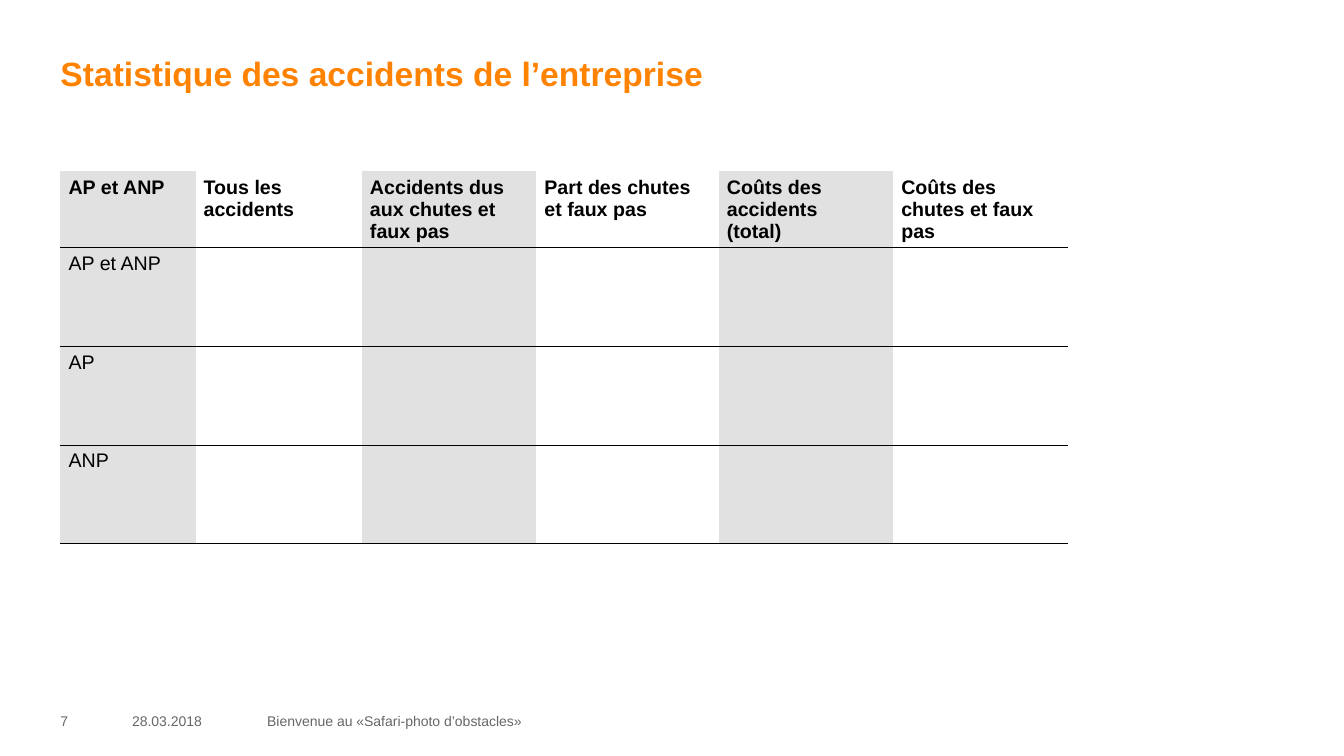
"""Build the company accident statistics slide."""
from dataclasses import dataclass

from lxml import etree
from pptx import Presentation
from pptx import util as u
from pptx.dml.color import RGBColor
from pptx.enum import text
from pptx.oxml import ns
from pptx.slide import Slide
from pptx.table import _Cell
from pptx.text.text import TextFrame

EMU_PER_PX = 9144
NO_STYLE = "{2D5ABB26-0587-4C30-8999-92F81FD0307C}"


@dataclass(frozen=True)
class Theme:
    font: str = "Arial"
    title_color: str = "FF8200"
    text_color: str = "000000"
    footer_color: str = "666666"
    stripe_color: str = "E1E1E1"
    title_size: int = 24
    table_size: int = 14
    footer_size: int = 10
    rule_width: float = 0.67


@dataclass(frozen=True)
class Box:
    left: int
    top: int
    width: int
    height: int


@dataclass(frozen=True)
class FooterItem:
    content: str
    left: int
    width: int


@dataclass(frozen=True)
class Column:
    heading: str
    width: int


THEME = Theme()
TITLE = "Statistique des accidents de l’entreprise"
TITLE_BOX = Box(60, 52, 1213, 94)
FOOTER_TOP, FOOTER_HEIGHT = 705, 20
FOOTER = [
    FooterItem("7", 60, 55),
    FooterItem("28.03.2018", 131, 118),
    FooterItem("Bienvenue au «Safari-photo d’obstacles»", 265, 858),
]
COLUMNS = [
    Column("AP et ANP", 134),
    Column("Tous les accidents", 165),
    Column("Accidents dus aux chutes et faux pas", 173),
    Column("Part des chutes et faux pas", 181),
    Column("Coûts des accidents \v(total)", 173),
    Column("Coûts des chutes et faux pas", 173),
]
ROW_LABELS = ["AP et ANP", "AP", "ANP"]
TABLE_LEFT, TABLE_TOP = 60, 170
HEADER_HEIGHT, ROW_HEIGHT = 75, 98


def px(length: int) -> u.Emu:
    """Convert px to EMU."""
    return u.Emu(length * EMU_PER_PX)


def write(frame: TextFrame, content: str, size: int, color: str, bold: bool = False) -> None:
    """Fill a text frame and format its runs."""
    frame.text = content
    for paragraph in frame.paragraphs:
        paragraph.alignment = text.PP_ALIGN.LEFT
        for run in paragraph.runs:
            run.font.name = THEME.font
            run.font.size = u.Pt(size)
            run.font.bold = bold
            run.font.color.rgb = RGBColor.from_string(color)


def prepare(frame: TextFrame, anchor: text.MSO_ANCHOR) -> None:
    """Remove margins and fix wrapping and anchoring."""
    frame.margin_left = frame.margin_top = frame.margin_right = frame.margin_bottom = 0
    frame.word_wrap = True
    frame.auto_size = text.MSO_AUTO_SIZE.NONE
    frame.vertical_anchor = anchor


def add_title(slide: Slide) -> None:
    """Place the title in its placeholder."""
    title = slide.shapes.title
    title.left, title.top = px(TITLE_BOX.left), px(TITLE_BOX.top)
    title.width, title.height = px(TITLE_BOX.width), px(TITLE_BOX.height)
    prepare(title.text_frame, text.MSO_ANCHOR.TOP)
    write(title.text_frame, TITLE, THEME.title_size, THEME.title_color, bold=True)
    title.text_frame.paragraphs[0].line_spacing = 1.0


def add_footer(slide: Slide, item: FooterItem) -> None:
    """Draw one footer entry."""
    shape = slide.shapes.add_textbox(
        px(item.left), px(FOOTER_TOP), px(item.width), px(FOOTER_HEIGHT))
    prepare(shape.text_frame, text.MSO_ANCHOR.MIDDLE)
    write(shape.text_frame, item.content, THEME.footer_size, THEME.footer_color)


def add_bottom_rule(cell: _Cell) -> None:
    """Draw a solid line under a cell."""
    line = etree.Element(ns.qn("a:lnB"), w=str(u.Pt(THEME.rule_width)))
    fill = etree.SubElement(line, ns.qn("a:solidFill"))
    etree.SubElement(fill, ns.qn("a:srgbClr"), val=THEME.text_color)
    cell._tc.get_or_add_tcPr().insert(0, line)


def add_statistics(slide: Slide) -> None:
    """Draw the striped accident table."""
    heights = [HEADER_HEIGHT] + [ROW_HEIGHT] * len(ROW_LABELS)
    table = slide.shapes.add_table(
        len(heights), len(COLUMNS), px(TABLE_LEFT), px(TABLE_TOP),
        px(sum(column.width for column in COLUMNS)), px(sum(heights))).table
    table.horz_banding = False
    table._tbl.tblPr.find(ns.qn("a:tableStyleId")).text = NO_STYLE
    for row, height in zip(table.rows, heights):
        row.height = px(height)
    for index, column in enumerate(COLUMNS):
        table.columns[index].width = px(column.width)
        write(table.cell(0, index).text_frame, column.heading,
              THEME.table_size, THEME.text_color, bold=True)
        for row in table.rows:
            cell = row.cells[index]
            cell.margin_left = cell.margin_right = px(8)
            cell.margin_top = cell.margin_bottom = px(5)
            if index % 2 == 0:
                cell.fill.solid()
                cell.fill.fore_color.rgb = RGBColor.from_string(THEME.stripe_color)
            else:
                cell.fill.background()
            add_bottom_rule(cell)
    for index, label in enumerate(ROW_LABELS, start=1):
        write(table.cell(index, 0).text_frame, label, THEME.table_size, THEME.text_color)


def main() -> None:
    """Create and save the presentation."""
    presentation = Presentation()
    presentation.slide_width, presentation.slide_height = px(1333), px(750)
    slide = presentation.slides.add_slide(presentation.slide_layouts[5])
    add_title(slide)
    for item in FOOTER:
        add_footer(slide, item)
    add_statistics(slide)
    presentation.save("out.pptx")


if __name__ == "__main__":
    main()
